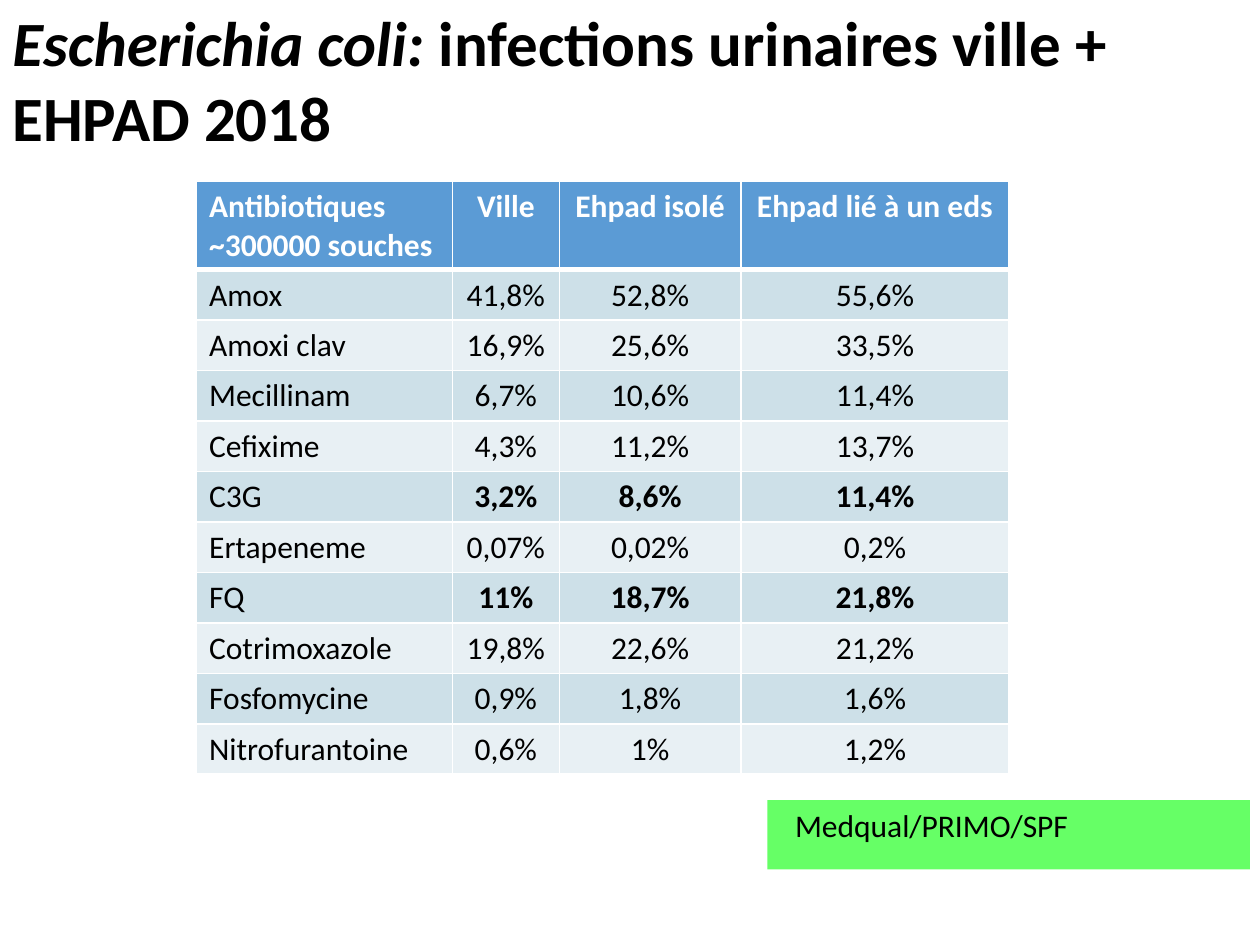
from lxml.etree import SubElement
from pptx import Presentation
from pptx.dml.color import RGBColor
from pptx.enum.shapes import MSO_SHAPE
from pptx.enum.text import MSO_ANCHOR, PP_ALIGN
from pptx.oxml.ns import qn
from pptx.util import Inches, Pt

COLORS = {
    "text": "000000",
    "white": "FFFFFF",
    "header": "5B9BD5",
    "odd_row": "CDE0E8",
    "even_row": "E8F0F4",
    "source": "66FF66",
}
HEADINGS = ["Antibiotiques\n~300000 souches", "Ville", "Ehpad isolé", "Ehpad lié à un eds"]
RESISTANCE = [
    ("Amox", "41,8%", "52,8%", "55,6%"),
    ("Amoxi clav", "16,9%", "25,6%", "33,5%"),
    ("Mecillinam", "6,7%", "10,6%", "11,4%"),
    ("Cefixime", "4,3%", "11,2%", "13,7%"),
    ("C3G", "3,2%", "8,6%", "11,4%"),
    ("Ertapeneme", "0,07%", "0,02%", "0,2%"),
    ("FQ", "11%", "18,7%", "21,8%"),
    ("Cotrimoxazole", "19,8%", "22,6%", "21,2%"),
    ("Fosfomycine", "0,9%", "1,8%", "1,6%"),
    ("Nitrofurantoine", "0,6%", "1%", "1,2%"),
]
HIGHLIGHTED = {"C3G", "FQ"}
COLUMN_WIDTHS = [2.03, 0.85, 1.44, 2.13]
HEADER_HEIGHT, ROW_HEIGHT = 0.68, 0.4


class SlideBuilder:
    def __init__(self, slide, font="Calibri"):
        self.slide = slide
        self.font = font

    def color(self, name):
        return RGBColor.from_string(COLORS[name])

    def run(self, paragraph, text, size=18, color="text", bold=False, italic=False):
        run = paragraph.add_run()
        run.text = text
        run.font.name = self.font
        run.font.size = Pt(size)
        run.font.bold = bold
        run.font.italic = italic
        run.font.color.rgb = self.color(color)

    def title(self, box, parts):
        """Add a heading; parts are (text, italic) pairs."""
        heading = self.slide.shapes.add_textbox(*map(Inches, box))
        frame = heading.text_frame
        frame.word_wrap = True
        frame.vertical_anchor = MSO_ANCHOR.MIDDLE
        for text, italic in parts:
            self.run(frame.paragraphs[0], text, size=36, bold=True, italic=italic)

    def label(self, box, text, fill, indent):
        label = self.slide.shapes.add_shape(MSO_SHAPE.RECTANGLE, *map(Inches, box))
        label.shadow.inherit = False
        label.fill.solid()
        label.fill.fore_color.rgb = self.color(fill)
        label.line.fill.background()
        frame = label.text_frame
        frame.word_wrap = True
        frame.vertical_anchor = MSO_ANCHOR.TOP
        frame.margin_left = Inches(0.1 + indent)
        paragraph = frame.paragraphs[0]
        paragraph.alignment = PP_ALIGN.LEFT
        self.run(paragraph, text)

    def borders(self, cell, bottom):
        """Draw white borders; they must come before the fill in the cell XML."""
        properties = cell._tc.get_or_add_tcPr()
        for side, width in (("L", 1), ("R", 1), ("T", 1), ("B", bottom)):
            line = SubElement(properties, qn(f"a:ln{side}"), w=str(Pt(width)))
            solid = SubElement(line, qn("a:solidFill"))
            SubElement(solid, qn("a:srgbClr"), val=COLORS["white"])

    def cell(self, cell, text, fill, color="text", bold=False, centred=True, bottom=1):
        self.borders(cell, bottom)
        cell.fill.solid()
        cell.fill.fore_color.rgb = self.color(fill)
        frame = cell.text_frame
        for index, line in enumerate(text.split("\n")):
            paragraph = frame.add_paragraph() if index else frame.paragraphs[0]
            paragraph.alignment = PP_ALIGN.CENTER if centred else PP_ALIGN.LEFT
            self.run(paragraph, line, color=color, bold=bold)

    def table(self, left, top, headings, rows):
        height = HEADER_HEIGHT + ROW_HEIGHT * len(rows)
        table = self.slide.shapes.add_table(
            len(rows) + 1, len(headings), Inches(left), Inches(top),
            Inches(sum(COLUMN_WIDTHS)), Inches(height)).table
        for column, width in zip(table.columns, COLUMN_WIDTHS):
            column.width = Inches(width)
        for index, row in enumerate(table.rows):
            row.height = Inches(ROW_HEIGHT if index else HEADER_HEIGHT)

        for col, heading in enumerate(headings):
            self.cell(table.cell(0, col), heading, "header", color="white", bold=True,
                      centred=col > 0, bottom=3)
        table.cell(0, 0).vertical_anchor = MSO_ANCHOR.MIDDLE
        for row, values in enumerate(rows, start=1):
            fill = "odd_row" if row % 2 else "even_row"
            for col, value in enumerate(values):
                self.cell(table.cell(row, col), value, fill, centred=col > 0,
                          bold=col > 0 and values[0] in HIGHLIGHTED)


def main():
    presentation = Presentation()
    presentation.slide_width = Inches(10)
    presentation.slide_height = Inches(7.5)
    builder = SlideBuilder(presentation.slides.add_slide(presentation.slide_layouts[6]))
    builder.title((0, 0, 10, 1.25), [
        ("Escherichia coli: ", True),
        ("infections urinaires ville + EHPAD 2018", False),
    ])
    builder.label((6.09, 6.35, 3.83, 0.55), "Medqual/PRIMO/SPF", "source", indent=0.12)
    builder.table(1.56, 1.44, HEADINGS, RESISTANCE)
    presentation.save("out.pptx")


if __name__ == "__main__":
    main()
